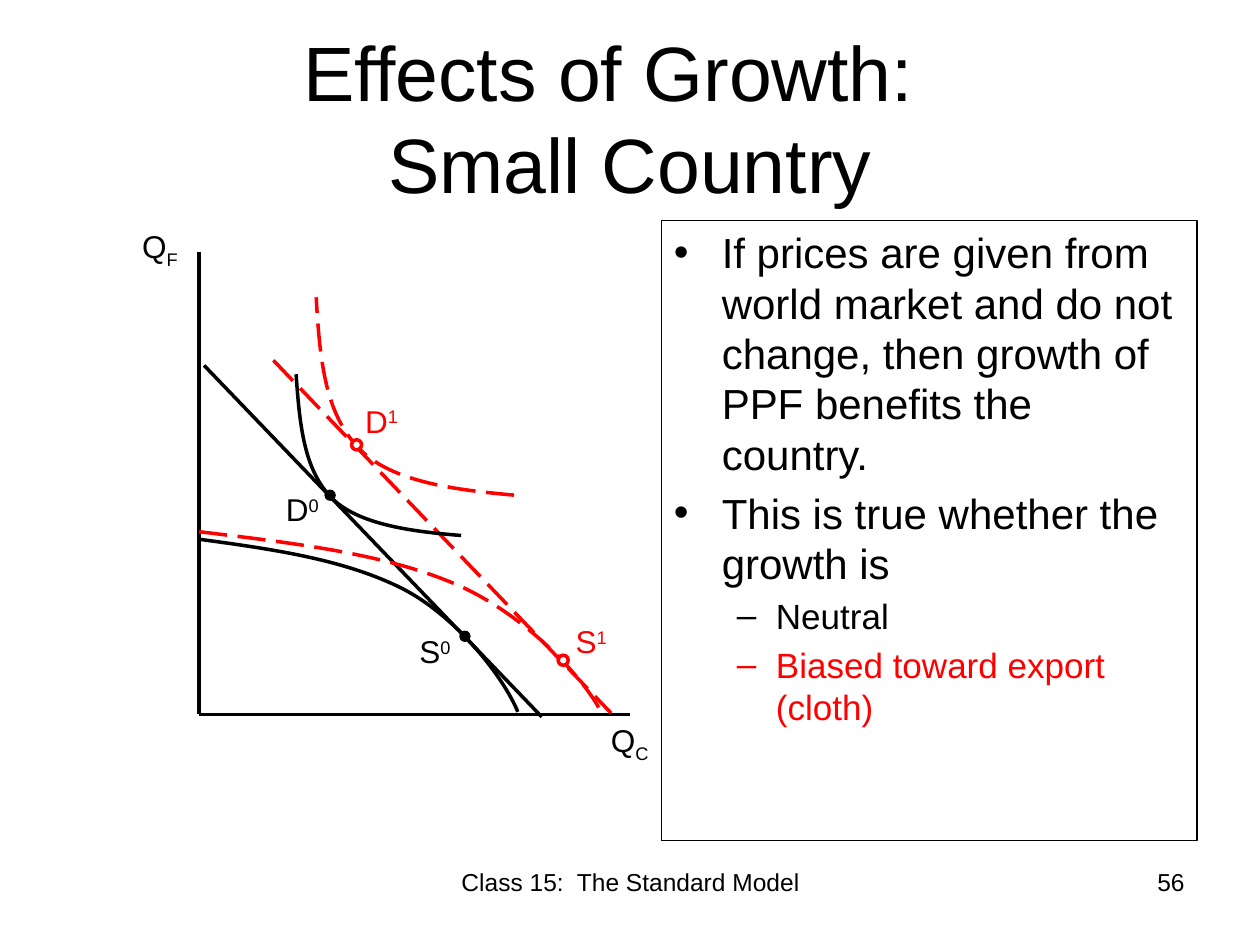
"""Build the slide on growth effects in a small country."""
import pptx
import pptx.dml.color
import pptx.enum.dml
import pptx.enum.shapes
import pptx.enum.text
import pptx.oxml
import pptx.oxml.ns
import pptx.util

Inches, Pt = pptx.util.Inches, pptx.util.Pt
ALIGN = pptx.enum.text.PP_ALIGN
ANCHOR = pptx.enum.text.MSO_ANCHOR
SHAPE = pptx.enum.shapes.MSO_SHAPE
DRAWING = pptx.oxml.ns.nsdecls("a")
COLORS = {"black": "000000", "red": "FF0000", "white": "FFFFFF"}

TITLE = "Effects of Growth:  \vSmall Country"
BULLETS = [
    ("If prices are given from world market and do not change, "
     "then growth of PPF benefits the country.", 0, "black"),
    ("This is true whether the growth is", 0, "black"),
    ("Neutral", 1, "black"),
    ("Biased toward export (cloth)", 1, "red"),
]
LEVELS = [
    {"mark": "•", "size": 24, "indent": 0.38, "hang": 0.38},
    {"mark": "–", "size": 20, "indent": 0.81, "hang": 0.31},
]
LINES = [
    ((1.58, 5.67), (5, 5.67), "black", False),
    ((1.58, 5.67), (1.58, 2), "black", False),
    ((1.62, 2.9), (4.3, 5.69), "black", False),
    ((2.17, 2.86), (4.85, 5.66), "red", True),
]
CURVES = [
    ([(1.58, 4.28), (2.17, 4.36), (2.73, 4.44), (3.19, 4.67),
      (3.64, 4.9), (4.01, 5.4), (4.11, 5.65)], "black", False),
    ([(3.66, 4.25), (3.29, 4.22), (2.86, 4.17), (2.64, 3.96),
      (2.42, 3.74), (2.38, 3.41), (2.35, 2.97)], "black", False),
    ([(1.58, 4.22), (2.32, 4.31), (3.03, 4.39), (3.6, 4.63),
      (4.17, 4.87), (4.64, 5.39), (4.77, 5.65)], "red", True),
    ([(4.08, 3.93), (3.63, 3.89), (3.12, 3.83), (2.86, 3.57),
      (2.59, 3.3), (2.54, 2.9), (2.51, 2.36)], "red", True),
]
DOTS = [
    (2.58, 3.89, "black", "black", 0.75),
    (3.65, 5.01, "black", "black", 0.75),
    (4.43, 5.2, "white", "red", 2),
    (2.79, 3.49, "white", "red", 2),
]
LABELS = [
    ("Q", "C", -25, (4.75, 5.67, 0.75, 0.71), "black"),
    ("Q", "F", -25, (1.03, 1.75, 0.75, 0.71), "black"),
    ("S", "0", 30, (3.23, 4.97, 0.47, 0.4), "black"),
    ("D", "0", 30, (2.17, 3.84, 0.48, 0.4), "black"),
    ("S", "1", 30, (4.47, 4.89, 0.47, 0.4), "red"),
    ("D", "1", 30, (2.8, 3.14, 0.58, 0.4), "red"),
]
FOOTERS = [
    ("Class 15:  The Standard Model", (3.42, 6.83, 3.17, 0.52), ALIGN.CENTER),
    ("56", (7.17, 6.83, 2.33, 0.52), ALIGN.RIGHT),
]


def rgb(color):
    return pptx.dml.color.RGBColor.from_string(COLORS[color])


def inches(values):
    return [Inches(value) for value in values]


def style_text(para, size, color):
    for span in para.runs:
        span.font.name = "Arial"
        span.font.size = Pt(size)
        span.font.color.rgb = rgb(color)


def style_line(line, color, width, dashed=False):
    line.color.rgb = rgb(color)
    line.width = Pt(width)
    if dashed:
        line.dash_style = pptx.enum.dml.MSO_LINE.LONG_DASH


def add_text(page, text, place, size, color, align=ALIGN.LEFT):
    box = page.shapes.add_textbox(*inches(place))
    box.text_frame.word_wrap = True
    para = box.text_frame.paragraphs[0]
    para.text = text
    para.alignment = align
    style_text(para, size, color)
    return para


def add_title(page):
    title = page.shapes.title
    title.left, title.top, title.width, title.height = inches((0.5, 0.3, 9, 1.25))
    frame = title.text_frame
    frame.text = TITLE
    frame.auto_size = pptx.enum.text.MSO_AUTO_SIZE.NONE
    frame.vertical_anchor = ANCHOR.MIDDLE
    frame.paragraphs[0].alignment = ALIGN.CENTER
    style_text(frame.paragraphs[0], 44, "black")


def add_bullets(page):
    box = page.shapes.add_shape(SHAPE.RECTANGLE, *inches((5.25, 1.75, 4.25, 4.92)))
    box.shadow.inherit = False
    box.fill.background()
    style_line(box.line, "black", 0.75)
    frame = box.text_frame
    frame.word_wrap = True
    frame.vertical_anchor = ANCHOR.TOP
    frame.text = "\n".join(text for text, _, _ in BULLETS)
    for para, (_, level, color) in zip(frame.paragraphs, BULLETS):
        rule = LEVELS[level]
        para.level = level
        para.alignment = ALIGN.LEFT
        para.space_before = Pt(rule["size"] * 0.2)
        style_text(para, rule["size"], color)
        props = para._p.get_or_add_pPr()
        props.set("marL", str(Inches(rule["indent"])))
        props.set("indent", str(-Inches(rule["hang"])))
        for tag in ('buFont typeface="Arial"', f'buChar char="{rule["mark"]}"'):
            props.append(pptx.oxml.parse_xml(f"<a:{tag} {DRAWING}/>"))


def add_line(page, start, end, color, dashed):
    line = page.shapes.add_connector(
        pptx.enum.shapes.MSO_CONNECTOR.STRAIGHT, *inches(start + end))
    style_line(line.line, color, 2, dashed)
    line._element.spPr.append(pptx.oxml.parse_xml(f"<a:effectLst {DRAWING}/>"))


def add_curve(page, controls, color, dashed):
    builder = page.shapes.build_freeform(*inches(controls[0]), scale=1.0)
    builder.add_line_segments([inches(point) for point in controls[1:]], close=False)
    curve = builder.convert_to_shape()
    segments = list(curve._element.iter(pptx.oxml.ns.qn("a:lnTo")))
    outline = segments[0].getparent()
    for first in range(0, len(segments), 3):
        bend = pptx.oxml.parse_xml(f"<a:cubicBezTo {DRAWING}/>")
        for segment in segments[first:first + 3]:
            bend.append(segment[0])
            outline.remove(segment)
        outline.append(bend)
    curve.shadow.inherit = False
    curve.fill.background()
    style_line(curve.line, color, 2, dashed)


def add_dot(page, left, top, fill, color, width):
    dot = page.shapes.add_shape(SHAPE.OVAL, *inches((left, top, 0.08, 0.08)))
    dot.shadow.inherit = False
    dot.fill.solid()
    dot.fill.fore_color.rgb = rgb(fill)
    style_line(dot.line, color, width)


def add_label(page, letter, mark, baseline, place, color):
    para = add_text(page, letter, place, 18, color)
    para.add_run().text = mark
    style_text(para, 18, color)
    para.runs[1].font._element.set("baseline", str(baseline * 1000))


def main():
    deck = pptx.Presentation()
    deck.slide_width, deck.slide_height = Inches(10), Inches(7.5)
    page = deck.slides.add_slide(deck.slide_layouts[5])
    add_title(page)
    add_bullets(page)
    for draw, items in ((add_line, LINES), (add_curve, CURVES),
                        (add_dot, DOTS), (add_label, LABELS)):
        for item in items:
            draw(page, *item)
    for text, place, align in FOOTERS:
        add_text(page, text, place, 14, "black", align)
    deck.save("out.pptx")


if __name__ == "__main__":
    main()
